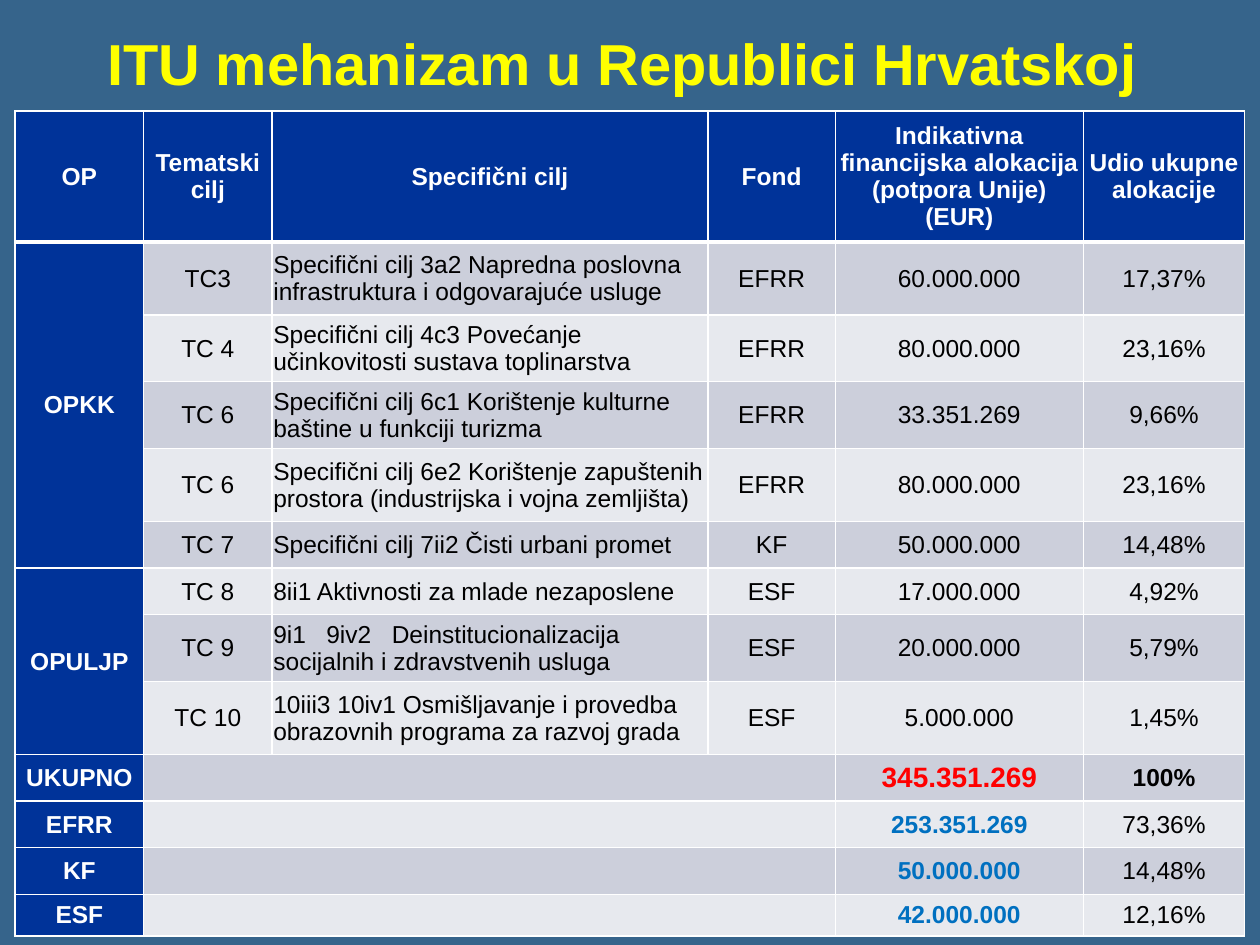
"""Builds the slide on the ITU mechanism in Croatia with its allocation table."""
from lxml.etree import SubElement
from pptx import Presentation
from pptx.dml.color import RGBColor
from pptx.enum.text import MSO_ANCHOR, PP_ALIGN
from pptx.oxml.ns import qn
from pptx.util import Inches, Pt

TITLE = "ITU mehanizam u Republici Hrvatskoj"
HEADER = ["OP", "Tematski cilj", "Specifični cilj", "Fond",
          "Indikativna financijska alokacija (potpora Unije) (EUR)", "Udio ukupne alokacije"]
PROGRAMMES = [
    ("OPKK", [
        ("TC3", "Specifični cilj 3a2 Napredna poslovna infrastruktura i odgovarajuće usluge",
         "EFRR", "60.000.000", "17,37%"),
        ("TC 4", "Specifični cilj 4c3 Povećanje učinkovitosti sustava toplinarstva",
         "EFRR", "80.000.000", "23,16%"),
        ("TC 6", "Specifični cilj 6c1 Korištenje kulturne baštine u funkciji turizma",
         "EFRR", "33.351.269", "9,66%"),
        ("TC 6", "Specifični cilj 6e2 Korištenje zapuštenih prostora (industrijska i vojna zemljišta)",
         "EFRR", "80.000.000", "23,16%"),
        ("TC 7", "Specifični cilj 7ii2 Čisti urbani promet", "KF", "50.000.000", "14,48%"),
    ]),
    ("OPULJP", [
        ("TC 8", "8ii1 Aktivnosti za mlade nezaposlene", "ESF", "17.000.000", "4,92%"),
        ("TC 9", "9i1\t9iv2\tDeinstitucionalizacija socijalnih i zdravstvenih usluga",
         "ESF", "20.000.000", "5,79%"),
        ("TC 10", "10iii3 10iv1 Osmišljavanje i provedba obrazovnih programa za razvoj grada",
         "ESF", "5.000.000", "1,45%"),
    ]),
]
TOTALS = [("UKUPNO", "345.351.269", "100%"), ("EFRR", "253.351.269", "73,36%"),
          ("KF", "50.000.000", "14,48%"), ("ESF", "42.000.000", "12,16%")]
COL_WIDTHS = [1.02, 1.02, 3.46, 1.01, 1.97, 1.28]
ROW_HEIGHTS = [1.04, 0.58, 0.53, 0.53, 0.58, 0.37, 0.37, 0.53, 0.58, 0.37, 0.37, 0.37, 0.33]
TAB_STOPS = [0.42, 0.94]
NAVY, WHITE, BLACK, RED, BLUE = "003399", "FFFFFF", "000000", "FF0000", "0070C0"
BANDS = ["E7E9EE", "CCCFDB"]


def rgb(value):
    return RGBColor.from_string(value)


def write(tf, text, size=14, color=BLACK, bold=False, align=PP_ALIGN.CENTER):
    p = tf.paragraphs[0]
    p.alignment = align
    p.line_spacing = 0.98
    if "\t" in text:
        tabs = SubElement(p._p.get_or_add_pPr(), qn("a:tabLst"))
        for stop in TAB_STOPS:
            SubElement(tabs, qn("a:tab"), pos=str(Inches(stop)), algn="l")
    if not text:
        p.font.size = Pt(size)
        return
    r = p.add_run()
    r.text = text
    r.font.name, r.font.size, r.font.bold = "Arial", Pt(size), bold
    r.font.color.rgb = rgb(color)


def add_borders(cell, **widths):
    tcPr = cell._tc.get_or_add_tcPr()
    for side in "LRTB":
        ln = SubElement(tcPr, qn(f"a:ln{side}"), w=str(Pt(widths.get(side, 1))))
        SubElement(SubElement(ln, qn("a:solidFill")), qn("a:srgbClr"), val=WHITE)


def style_cell(cell, row):
    cell.margin_left = cell.margin_right = cell.margin_top = Inches(0.01)
    cell.margin_bottom = 0
    cell.vertical_anchor = MSO_ANCHOR.MIDDLE
    add_borders(cell, T=3 if row == 1 else 1, B=3 if row == 0 else 1)
    cell.fill.solid()


def cell_format(row, col, first_total):
    if row == 0 or col == 0:
        return {"color": WHITE, "bold": True}
    if row == first_total and col == 4:
        return {"size": 16, "color": RED, "bold": True}
    if row > first_total and col == 4:
        return {"color": BLUE, "bold": True}
    if row == first_total:
        return {"bold": True}
    return {"align": PP_ALIGN.LEFT} if col == 2 else {}


def add_allocations(s):
    rows, merges = [HEADER], []
    for name, goals in PROGRAMMES:
        start = len(rows)
        rows += [[name if i == 0 else "", *goal] for i, goal in enumerate(goals)]
        merges.append((start, 0, len(rows) - 1, 0))
    first_total = len(rows)
    for name, amount, share in TOTALS:
        merges.append((len(rows), 1, len(rows), 3))
        rows.append([name, "", "", "", amount, share])

    table = s.shapes.add_table(len(rows), len(HEADER), Inches(0.12), Inches(0.88),
                               Inches(9.76), Inches(6.55)).table
    for column, width in zip(table.columns, COL_WIDTHS):
        column.width = Inches(width)
    for row, height in zip(table.rows, ROW_HEIGHTS):
        row.height = Inches(height)
    for top, left, bottom, right in merges:
        table.cell(top, left).merge(table.cell(bottom, right))
    for i, texts in enumerate(rows):
        for j, text in enumerate(texts):
            cell = table.cell(i, j)
            if cell.is_spanned:
                continue
            style_cell(cell, i)
            cell.fill.fore_color.rgb = rgb(NAVY if i == 0 or j == 0 else BANDS[i % 2])
            write(cell.text_frame, text, **cell_format(i, j, first_total))


def main():
    prs = Presentation()
    prs.slide_width, prs.slide_height = Inches(10), Inches(7.5)
    s = prs.slides.add_slide(prs.slide_layouts[5])
    s.background.fill.solid()
    s.background.fill.fore_color.rgb = rgb("36648B")
    title = s.shapes.title
    title.left, title.top, title.width, title.height = map(Inches, (0.75, 0.19, 9.06, 0.65))
    title.text_frame.vertical_anchor = MSO_ANCHOR.MIDDLE
    write(title.text_frame, TITLE, size=33, color="FFFF00", bold=True, align=PP_ALIGN.LEFT)
    add_allocations(s)
    prs.save("out.pptx")


if __name__ == "__main__":
    main()
